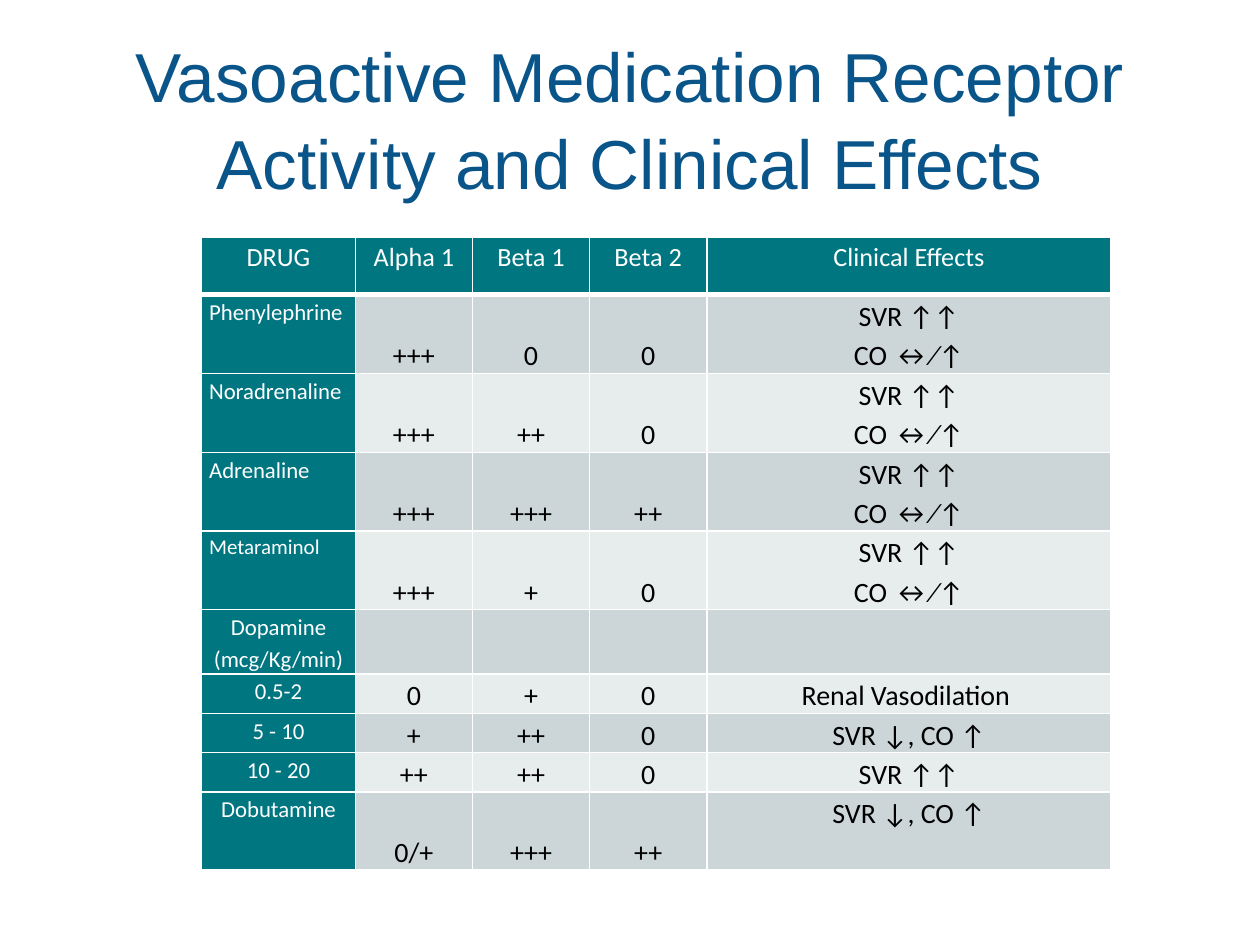
from lxml.etree import SubElement
from pptx import Presentation
from pptx.dml.color import RGBColor
from pptx.enum.text import MSO_ANCHOR, MSO_AUTO_SIZE, PP_ALIGN
from pptx.oxml.ns import qn
from pptx.util import Inches, Pt

TITLE = "Vasoactive Medication Receptor Activity and Clinical Effects"
HEADINGS = ("DRUG", "Alpha 1", "Beta 1", "Beta 2", "Clinical Effects")
PRESSOR = "SVR ↑↑\nCO ↔∕↑"
DRUGS = [
    ("Phenylephrine", "+++", "0", "0", PRESSOR),
    ("Noradrenaline", "+++", "++", "0", PRESSOR),
    ("Adrenaline", "+++", "+++", "++", PRESSOR),
    ("Metaraminol", "+++", "+", "0", PRESSOR),
    ("Dopamine\n(mcg/Kg/min)", "", "", "", ""),
    ("0.5-2", "0", "+", "0", "Renal Vasodilation\u00a0"),
    ("5 - 10", "+", "++", "0", "SVR ↓, CO ↑"),
    ("10 - 20", "++", "++", "0", "SVR ↑↑"),
    ("Dobutamine", "0/+", "+++", "++", "SVR ↓, CO ↑"),
]
LEFT_ALIGNED = {"Phenylephrine", "Noradrenaline", "Adrenaline", "Metaraminol"}
NAME_SIZES = {"Metaraminol": 12}

COLORS = {
    "title": "095489", "teal": "007681", "white": "FFFFFF", "black": "000000",
    "dark band": "CCD6D8", "light band": "E7ECED",
}
COLUMN_WIDTHS = (1.22, 0.93, 0.93, 0.93, 3.21)
LINE = 0.31
ROW_HEIGHTS = [0.46] + [2 * LINE] * 4 + [0.51] + [LINE] * 3 + [2 * LINE]


def color(name):
    return RGBColor.from_string(COLORS[name])


def draw_borders(cell, bottom):
    properties = cell._tc.get_or_add_tcPr()
    for side, width in (("L", 1), ("R", 1), ("T", 1), ("B", bottom)):
        line = SubElement(properties, qn(f"a:ln{side}"), w=str(Pt(width)))
        fill = SubElement(line, qn("a:solidFill"))
        SubElement(fill, qn("a:srgbClr"), val=COLORS["white"])


def fill_cell(cell, text, size, text_color, background, align, anchor, bottom=1):
    draw_borders(cell, bottom)
    cell.fill.solid()
    cell.fill.fore_color.rgb = color(background)
    cell.margin_left = cell.margin_right = Inches(0.06)
    cell.margin_top = cell.margin_bottom = 0
    cell.vertical_anchor = anchor
    cell.text = text
    for paragraph in cell.text_frame.paragraphs:
        paragraph.alignment = align
        paragraph.line_spacing = 1.15
        paragraph.font.name = "Calibri"
        paragraph.font.size = Pt(size)
        paragraph.font.color.rgb = color(text_color)


def add_title(slide):
    title = slide.shapes.title
    title.left, title.top = Inches(0.5), Inches(0.3)
    title.width, title.height = Inches(9), Inches(1.25)
    frame = title.text_frame
    frame.text = TITLE
    frame.word_wrap = True
    frame.auto_size = MSO_AUTO_SIZE.NONE
    frame.vertical_anchor = MSO_ANCHOR.MIDDLE
    heading = frame.paragraphs[0]
    heading.alignment = PP_ALIGN.CENTER
    heading.line_spacing = 1.04
    heading.font.name = "Arial"
    heading.font.size = Pt(39.6)
    heading.font.color.rgb = color("title")


def add_drug_table(slide):
    table = slide.shapes.add_table(
        len(ROW_HEIGHTS), len(COLUMN_WIDTHS), Inches(1.6), Inches(1.88),
        Inches(sum(COLUMN_WIDTHS)), Inches(sum(ROW_HEIGHTS))).table
    for column, width in zip(table.columns, COLUMN_WIDTHS):
        column.width = Inches(width)
    for row, height in zip(table.rows, ROW_HEIGHTS):
        row.height = Inches(height)

    for c, heading in enumerate(HEADINGS):
        fill_cell(table.cell(0, c), heading, 15, "white", "teal",
                  PP_ALIGN.CENTER, MSO_ANCHOR.TOP, bottom=3)
    for r, (drug, *receptors, effects) in enumerate(DRUGS, start=1):
        band = "dark band" if r % 2 else "light band"
        align = PP_ALIGN.LEFT if drug in LEFT_ALIGNED else PP_ALIGN.CENTER
        fill_cell(table.cell(r, 0), drug, NAME_SIZES.get(drug, 13), "white",
                  "teal", align, MSO_ANCHOR.TOP)
        for c, activity in enumerate(receptors, start=1):
            fill_cell(table.cell(r, c), activity, 16, "black", band,
                      PP_ALIGN.CENTER, MSO_ANCHOR.BOTTOM)
        fill_cell(table.cell(r, 4), effects, 16, "black", band,
                  PP_ALIGN.CENTER, MSO_ANCHOR.TOP)


def main():
    deck = Presentation()
    deck.slide_width, deck.slide_height = Inches(10), Inches(7.5)
    slide = deck.slides.add_slide(deck.slide_layouts[5])
    add_title(slide)
    add_drug_table(slide)
    deck.save("out.pptx")


if __name__ == "__main__":
    main()
